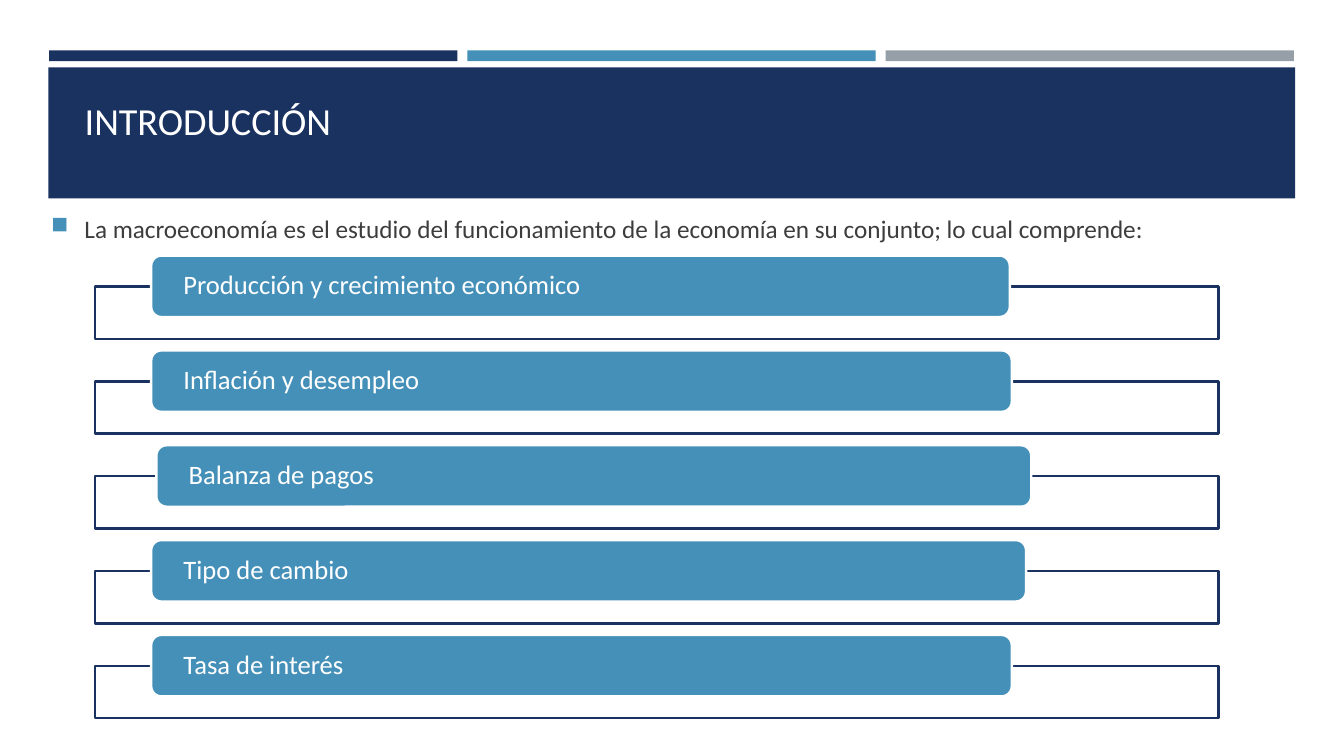
from dataclasses import dataclass

from lxml import etree
from pptx import Presentation
from pptx.dml.color import RGBColor
from pptx.enum.shapes import MSO_SHAPE
from pptx.enum.text import MSO_ANCHOR, PP_ALIGN
from pptx.oxml.ns import qn
from pptx.util import Cm, Pt

RECTANGLE = MSO_SHAPE.RECTANGLE
ROUNDED = MSO_SHAPE.ROUNDED_RECTANGLE
MIDDLE = MSO_ANCHOR.MIDDLE
BOTTOM = MSO_ANCHOR.BOTTOM
LEFT = PP_ALIGN.LEFT
TITLE_ONLY = 5


@dataclass(frozen=True)
class Theme:
    font: str = "Calibri"
    navy: str = "1A3260"
    blue: str = "4590B8"
    grey: str = "969FA7"
    white: str = "FFFFFF"
    body: str = "3D3D3D"
    title_size: float = 27.3
    body_size: float = 18
    topic_size: float = 19
    outline: float = 1.75


@dataclass(frozen=True)
class Box:
    left: float
    top: float
    width: float
    height: float

    def lengths(self):
        return Cm(self.left), Cm(self.top), Cm(self.width), Cm(self.height)


@dataclass(frozen=True)
class Topic:
    text: str
    width: float
    left: float = 3.81


THEME = Theme()
TOPICS = [
    Topic("Producción y crecimiento económico", 21.64),
    Topic("Inflación y desempleo", 21.69),
    Topic("Balanza de pagos", 22.05, left=3.94),
    Topic("Tipo de cambio", 22.05),
    Topic("Tasa de interés", 21.69),
]
TOPIC_PITCH = 2.39
STRIP_PITCH = 10.54


def add_block(slide, kind, box: Box, fill: str, line: str | None = None):
    shape = slide.shapes.add_shape(kind, *box.lengths())
    shape.shadow.inherit = False
    shape.fill.solid()
    shape.fill.fore_color.rgb = RGBColor.from_string(fill)
    if line:
        shape.line.color.rgb = RGBColor.from_string(line)
        shape.line.width = Pt(THEME.outline)
    else:
        shape.line.fill.background()
    return shape


def write(shape, text: str, size: float, color: str, anchor):
    frame = shape.text_frame
    frame.word_wrap = True
    frame.vertical_anchor = anchor
    paragraph = frame.paragraphs[0]
    paragraph.alignment = LEFT
    run = paragraph.add_run()
    run.text = text
    run.font.name = THEME.font
    run.font.size = Pt(size)
    run.font.color.rgb = RGBColor.from_string(color)
    return paragraph


def add_bullet(paragraph, color: str) -> None:
    properties = paragraph._p.get_or_add_pPr()
    properties.set("marL", str(Cm(0.84)))
    properties.set("indent", str(-Cm(0.84)))
    bullet_color = etree.SubElement(properties, qn("a:buClr"))
    etree.SubElement(bullet_color, qn("a:srgbClr"), val=color)
    etree.SubElement(properties, qn("a:buSzPct"), val="92000")
    etree.SubElement(properties, qn("a:buChar"), char="■")


def add_header(slide) -> None:
    for index, color in enumerate([THEME.navy, THEME.blue, THEME.grey]):
        add_block(slide, RECTANGLE, Box(1.24 + index * STRIP_PITCH, 1.27, 10.29, 0.27), color)
    add_block(slide, RECTANGLE, Box(1.22, 1.7, 31.42, 3.3), THEME.navy)

    # Bring the title in front of the band
    title = slide.shapes.title
    title._element.getparent().append(title._element)
    title.left, title.top, title.width, title.height = Box(1.88, 1.96, 26.97, 1.78).lengths()
    write(title, "INTRODUCCIÓN", THEME.title_size, THEME.white, BOTTOM)


def add_statement(slide) -> None:
    text_box = slide.shapes.add_textbox(*Box(1.04, 3.2, 29.67, 5.11).lengths())
    paragraph = write(
        text_box,
        "La macroeconomía es el estudio del funcionamiento de la economía "
        "en su conjunto; lo cual comprende:",
        THEME.body_size, THEME.body, MIDDLE)
    paragraph.space_before = Pt(3.6)
    paragraph.space_after = Pt(6)
    add_bullet(paragraph, THEME.blue)


def add_topic(slide, topic: Topic, offset: float) -> None:
    frame = add_block(slide, RECTANGLE, Box(2.39, 7.22 + offset, 28.32, 1.32),
                      THEME.white, THEME.navy)
    fill_color = frame._element.spPr.find(qn("a:solidFill"))[0]
    etree.SubElement(fill_color, qn("a:alpha"), val="90000")

    tab = add_block(slide, ROUNDED, Box(topic.left, 6.44 + offset, topic.width, 1.55),
                    THEME.blue, THEME.white)
    tab.text_frame.margin_left = tab.text_frame.margin_right = Cm(0.74)
    tab.text_frame.margin_top = tab.text_frame.margin_bottom = 0
    paragraph = write(tab, topic.text, THEME.topic_size, THEME.white, MIDDLE)
    paragraph.line_spacing = 0.9


def main() -> None:
    presentation = Presentation()
    presentation.slide_width, presentation.slide_height = Cm(33.87), Cm(19.05)
    slide = presentation.slides.add_slide(presentation.slide_layouts[TITLE_ONLY])
    add_header(slide)
    add_statement(slide)
    for index, topic in enumerate(TOPICS):
        add_topic(slide, topic, index * TOPIC_PITCH)
    presentation.save("out.pptx")


if __name__ == "__main__":
    main()
